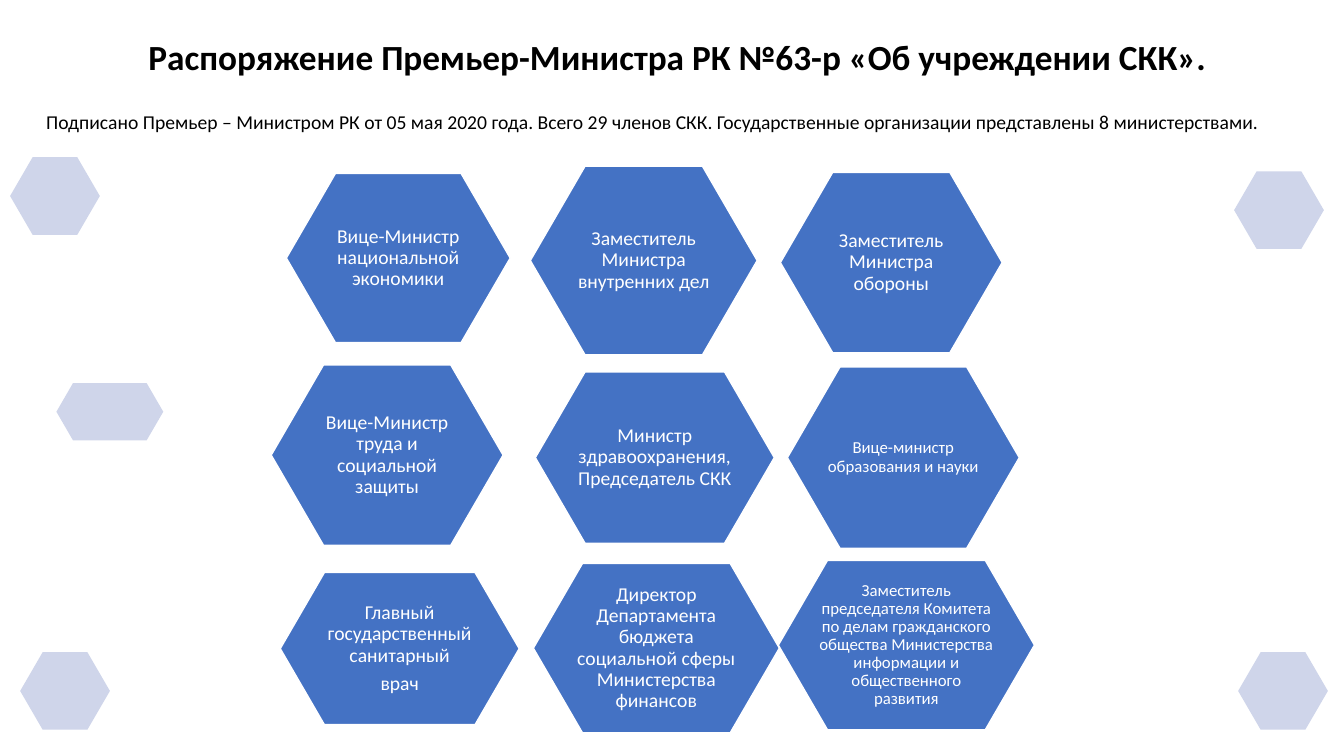
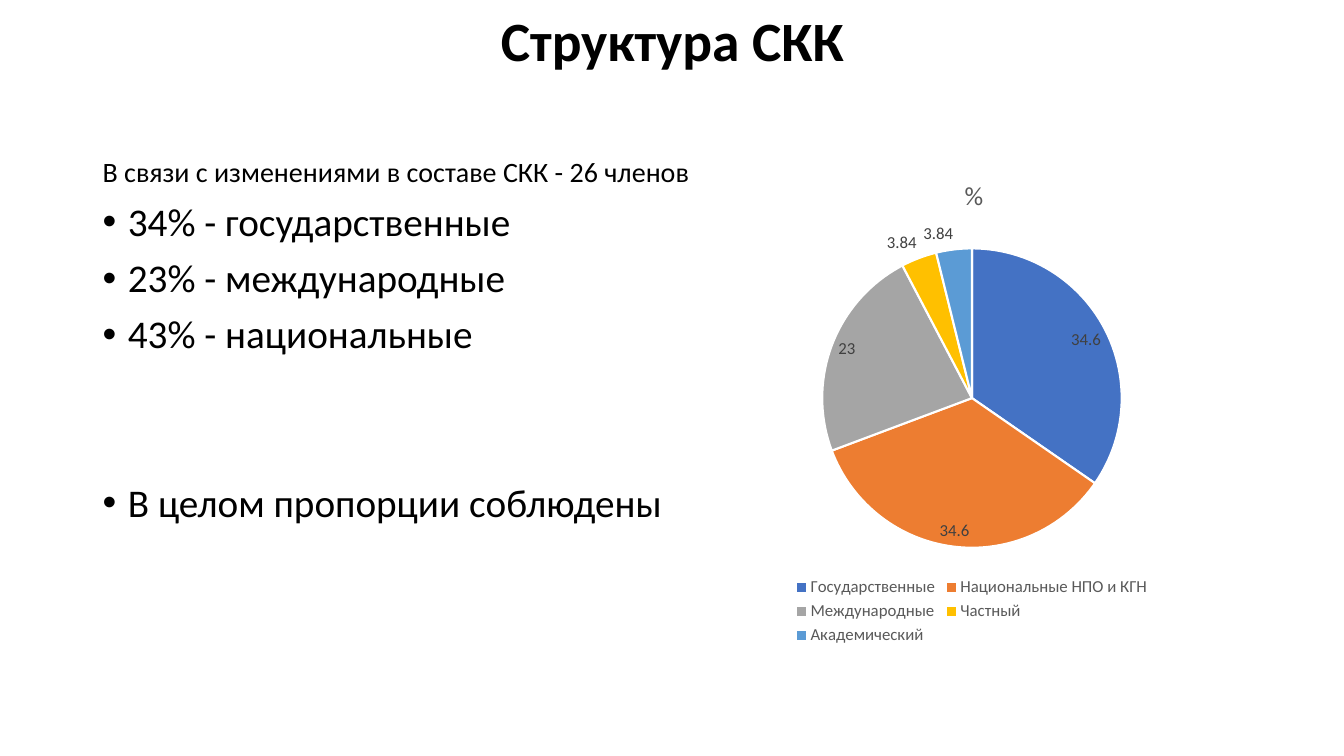
"""Build two slides on the SKK: its state members and its structure."""
from lxml import etree
from pptx import Presentation
from pptx.chart.data import CategoryChartData
from pptx.dml.color import RGBColor
from pptx.enum import chart as ch, shapes, text
from pptx.oxml import ns
from pptx.util import Inches, Pt

FONT = "Calibri"
COLORS = {
    "text": "000000", "member": "4472C4", "decor": "CFD5EA", "white": "FFFFFF",
    "caption": "595959", "label": "404040",
}
PIE_COLORS = ["4472C4", "ED7D31", "A5A5A5", "FFC000", "5B9BD5"]

MEMBERS_TITLE = "Распоряжение Премьер-Министра РК №63-р «Об учреждении СКК»."
MEMBERS_INTRO = ("Подписано Премьер – Министром РК от 05 мая 2020 года. Всего 29 членов СКК. "
                 "Государственные организации представлены 8 министерствами.")
MEMBERS = [
    ((2.84, 1.72, 2.22, 1.68), 14, ["Вице-Министр национальной экономики"]),
    ((5.26, 1.65, 2.25, 1.87), 14, ["Заместитель Министра внутренних дел"]),
    ((7.74, 1.71, 2.2, 1.79), 14, ["Заместитель Министра обороны"]),
    ((2.69, 3.62, 2.3, 1.79), 14, ["Вице-Министр труда и социальной защиты"]),
    ((5.31, 3.69, 2.37, 1.7), 14, ["Министр здравоохранения, Председатель СКК"]),
    ((7.81, 3.64, 2.3, 1.8), 12, ["Вице-министр образования и науки"]),
    ((2.78, 5.68, 2.37, 1.51), 14, ["Главный государственный санитарный", "врач"]),
    ((5.29, 5.59, 2.44, 1.68), 14,
     ["Директор Департамента бюджета социальной сферы Министерства финансов"]),
    ((7.72, 5.56, 2.54, 1.68), 12,
     ["Заместитель председателя Комитета по делам гражданского общества "
      "Министерства информации и общественного развития"]),
]
DECOR = [
    (0.1, 1.56, 0.89, 0.77), (12.24, 1.7, 0.89, 0.77), (0.56, 3.8, 1.06, 0.57),
    (0.2, 6.47, 0.89, 0.77), (12.28, 6.47, 0.89, 0.77),
]

STRUCTURE_TITLE = "Структура СКК"
STRUCTURE_INTRO = "В связи с изменениями в составе СКК - 26 членов"
STRUCTURE_POINTS = [
    ("34% - государственные", 10),
    ("23% - международные", 10),
    ("43% - национальные", 10),
    ("В целом пропорции соблюдены", 90),
]
SHARES = {
    "Государственные": 34.6, "Национальные НПО и КГН": 34.6, "Международные": 23,
    "Частный": 3.84, "Академический": 3.84,
}


def rgb(name):
    return RGBColor.from_string(COLORS[name])


def style_font(font, size, color, bold=False):
    font.name, font.size, font.bold = FONT, Pt(size), bold
    font.color.rgb = rgb(color)


def add_paragraph(frame, words, size, color="text", bold=False, align=None,
                  before=0, after=0, bullet=False):
    paragraph = frame.paragraphs[0]
    if paragraph.runs:
        paragraph = frame.add_paragraph()
    paragraph.alignment = align
    paragraph.line_spacing = 0.9
    paragraph.space_before, paragraph.space_after = Pt(before), Pt(after)
    run = paragraph.add_run()
    run.text = words
    style_font(run.font, size, color, bold)
    if bullet:
        props = paragraph._p.get_or_add_pPr()
        props.set("marL", str(Inches(0.25)))
        props.set("indent", str(-Inches(0.25)))
        etree.SubElement(props, ns.qn("a:buFont")).set("typeface", "Arial")
        etree.SubElement(props, ns.qn("a:buChar")).set("char", "•")


def add_frame(slide, box, anchor=text.MSO_ANCHOR.TOP):
    frame = slide.shapes.add_textbox(*map(Inches, box)).text_frame
    frame.word_wrap = True
    frame.vertical_anchor = anchor
    return frame


def add_title(slide, words, box, size):
    frame = add_frame(slide, box, text.MSO_ANCHOR.MIDDLE)
    add_paragraph(frame, words, size, bold=True, align=text.PP_ALIGN.CENTER)


def add_hexagon(slide, box, color):
    hexagon = slide.shapes.add_shape(shapes.MSO_SHAPE.HEXAGON, *map(Inches, box))
    hexagon.adjustments[0] = 0.29
    hexagon.shadow.inherit = False
    hexagon.fill.solid()
    hexagon.fill.fore_color.rgb = rgb(color)
    hexagon.line.fill.background()
    return hexagon


def add_member(slide, box, size, lines):
    hexagon = add_hexagon(slide, box, "member")
    hexagon.line.color.rgb = rgb("white")
    hexagon.line.width = Pt(1)
    frame = hexagon.text_frame
    frame.word_wrap = True
    frame.vertical_anchor = text.MSO_ANCHOR.MIDDLE
    frame.margin_left = frame.margin_right = Inches(0.02)
    frame.margin_top = frame.margin_bottom = Inches(0.02)
    for line in lines:
        add_paragraph(frame, line, size, "white", align=text.PP_ALIGN.CENTER,
                      after=0.35 * size)


def set_layout(parent, index, **places):
    for old in parent.findall(ns.qn("c:layout")):
        parent.remove(old)
    layout = etree.Element(ns.qn("c:layout"))
    manual = etree.SubElement(layout, ns.qn("c:manualLayout"))
    for tag, value in places.items():
        etree.SubElement(manual, ns.qn("c:" + tag)).set("val", str(value))
    parent.insert(index, layout)


def add_shares_pie(slide, box):
    data = CategoryChartData()
    data.categories = list(SHARES)
    data.add_series("%", list(SHARES.values()))
    pie = slide.shapes.add_chart(ch.XL_CHART_TYPE.PIE, *map(Inches, box), data).chart
    style_font(pie.font, 12, "label")

    pie.has_title = True
    caption = pie.chart_title.text_frame.paragraphs[0].add_run()
    caption.text = "%"
    style_font(caption.font, 18.6, "caption")
    set_layout(pie.chart_title._element, 1, xMode="edge", yMode="edge", x=0.48, y=0.05)
    plot_area = pie._chartSpace.chart.plotArea
    set_layout(plot_area, 0, layoutTarget="inner", xMode="edge", yMode="edge",
               x=0.25, y=0.2, w=0.5, h=0.6)

    pie.has_legend = True
    pie.legend.position = ch.XL_LEGEND_POSITION.BOTTOM
    pie.legend.include_in_layout = False
    style_font(pie.legend.font, 12, "caption")

    plot = pie.plots[0]
    plot.vary_by_categories = True
    plot.has_data_labels = True
    labels = plot.data_labels
    labels.show_value, labels.show_percentage = True, False
    labels.position = ch.XL_LABEL_POSITION.BEST_FIT
    style_font(labels.font, 12, "label")
    for index, color in enumerate(PIE_COLORS):
        slice_format = plot.series[0].points[index].format
        slice_format.fill.solid()
        slice_format.fill.fore_color.rgb = RGBColor.from_string(color)
        slice_format.line.color.rgb = rgb("white")
        slice_format.line.width = Pt(1.5)


def build_members(slide):
    add_title(slide, MEMBERS_TITLE, (0.45, 0.4, 12.54, 0.37), 25.2)
    add_paragraph(add_frame(slide, (0.36, 1.07, 12.54, 0.4)), MEMBERS_INTRO, 14)
    for box in DECOR:
        add_hexagon(slide, box, "decor")
    for box, size, lines in MEMBERS:
        add_member(slide, box, size, lines)


def build_structure(slide):
    add_title(slide, STRUCTURE_TITLE, (0.92, 0.1, 11.5, 0.66), 39.6)
    add_shares_pie(slide, (6.67, 1.46, 5.94, 4.98))
    frame = add_frame(slide, (0.92, 1.52, 11.5, 5.3))
    add_paragraph(frame, STRUCTURE_INTRO, 20)
    for words, before in STRUCTURE_POINTS:
        add_paragraph(frame, words, 28, before=before, bullet=True)


def main():
    deck = Presentation()
    deck.slide_width, deck.slide_height = Inches(13.33), Inches(7.5)
    for build in (build_members, build_structure):
        build(deck.slides.add_slide(deck.slide_layouts[6]))
    deck.save("out.pptx")


if __name__ == "__main__":
    main()
